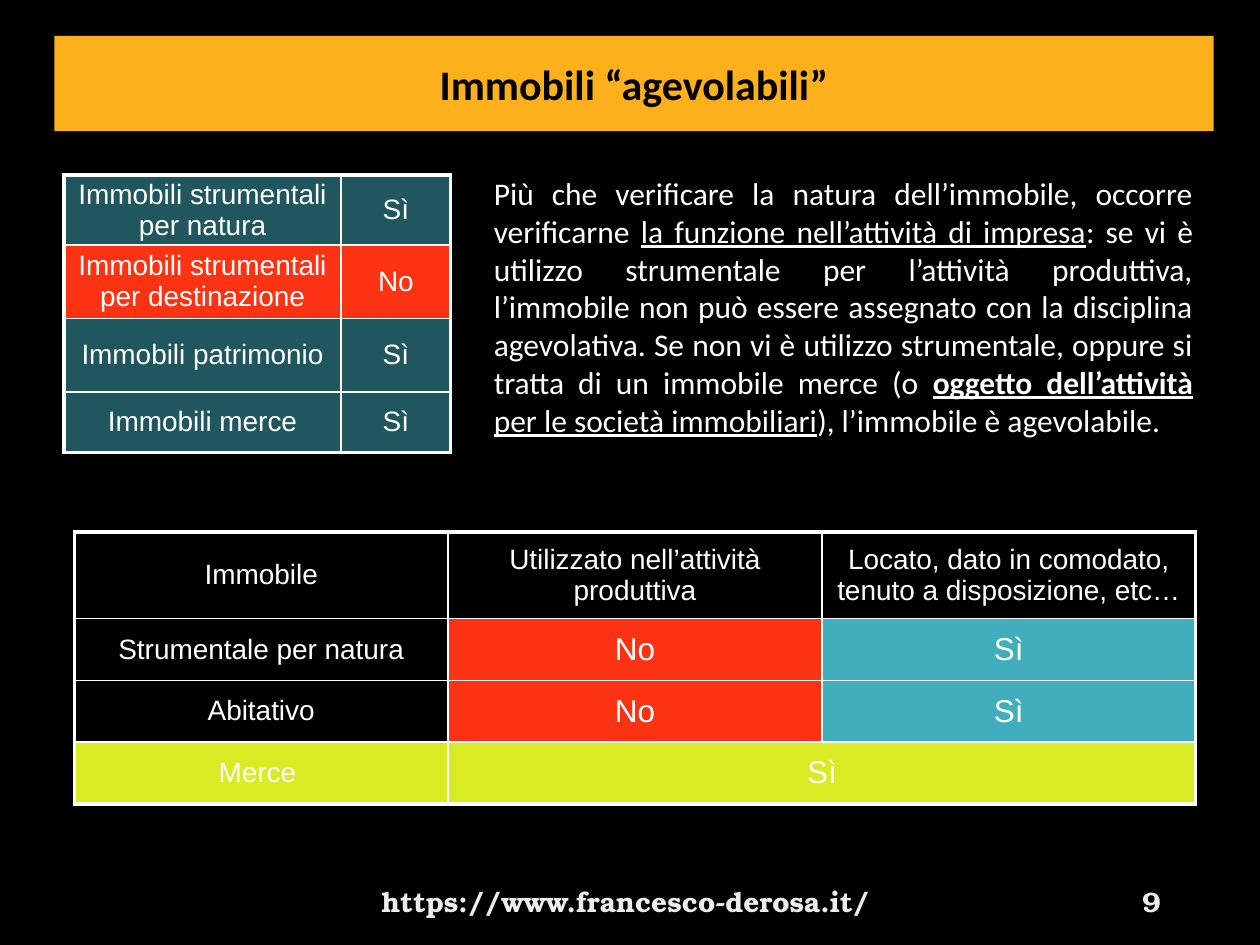
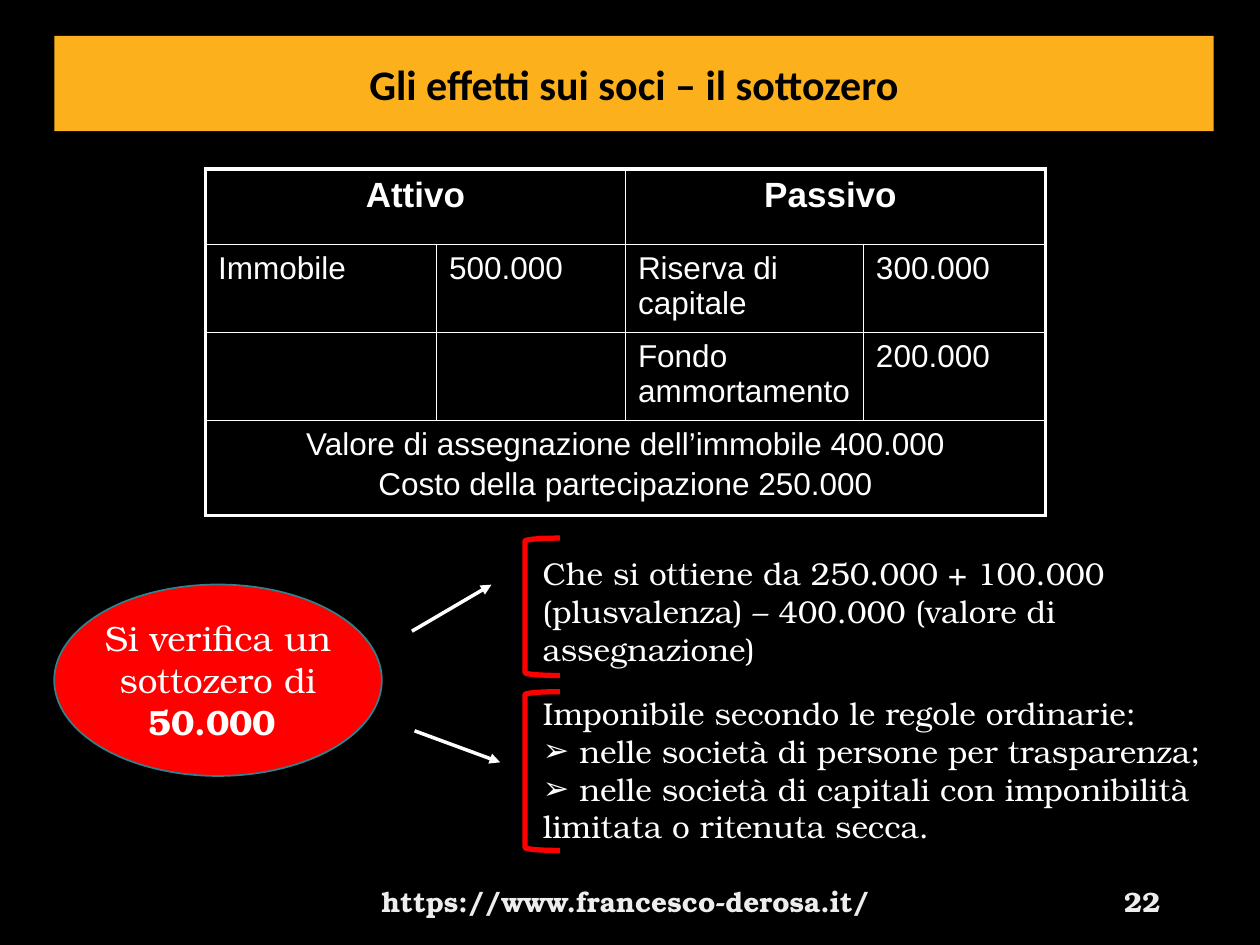
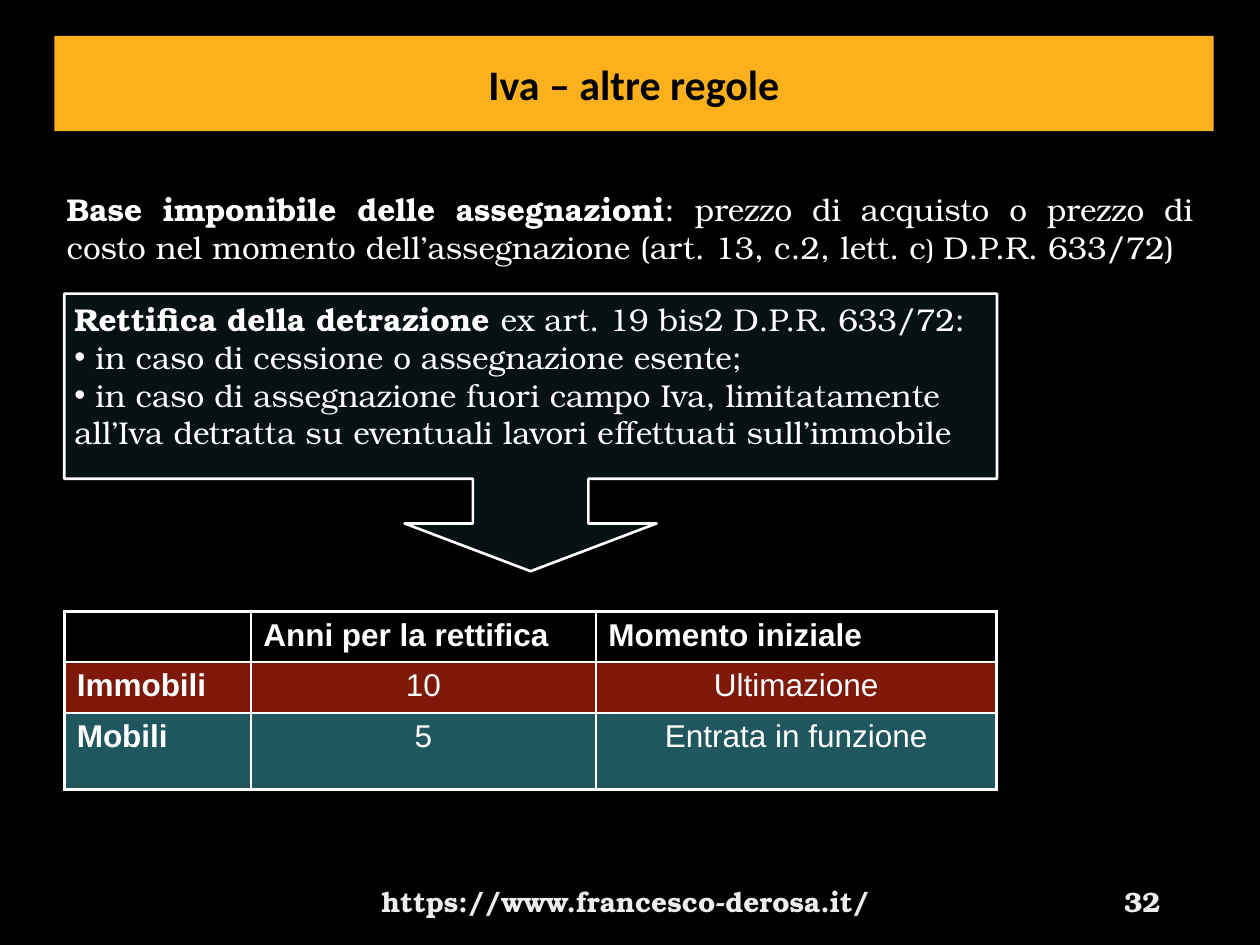
from dataclasses import dataclass
from lxml.etree import SubElement
from pptx import Presentation
from pptx.dml.color import RGBColor
from pptx.enum.shapes import MSO_CONNECTOR as Link, MSO_SHAPE as Form
from pptx.enum.text import MSO_ANCHOR as Anchor, MSO_AUTO_SIZE as Fit, PP_ALIGN as Align
from pptx.oxml.ns import qn
from pptx.util import Pt

HUES = {"black": "000000", "white": "FFFFFF", "amber": "FCB11C", "teal": "41AEBD",
        "coral": "FC3312", "lime": "D8EB23", "red": "FF0000", "rim": "30818C",
        "pale": "EDEDED"}
SANS, SERIF, GRID = "Calibri", "TeX Gyre Bonum", "Arial"
LEFT, MID, JUST, RIGHT = Align.LEFT, Align.CENTER, Align.JUSTIFY, Align.RIGHT
SITE = "https://www.francesco-derosa.it/"


@dataclass
class Cell:
    text: str = ""
    fill: str = ""
    alpha: int = 100
    size: int = 18
    bold: bool = False
    align: Align = MID
    span: int = 1


def small(text, fill="", alpha=100):
    return Cell(text, fill, alpha, 16)


def left(text, bold=False, fill="", alpha=100):
    return Cell(text, fill, alpha, bold=bold, align=LEFT)


# ---- Content: tables (None marks a cell covered by a span) ----
KINDS = {
    "at": (36.5, 100), "cols": (158.5, 62.5), "rows": (40, 42, 42, 34.5),
    "middle": True, "tight": True,
    "cells": [[small(name, *tint), small(answer, *tint)] for name, answer, tint in (
        ("Immobili strumentali per natura", "Sì", ("teal", 50)),
        ("Immobili strumentali per destinazione", "No", ("coral",)),
        ("Immobili patrimonio", "Sì", ("teal", 50)),
        ("Immobili merce", "Sì", ("teal", 50)))]}

USES = {
    "at": (42.5, 304), "cols": (213.6,) * 3, "rows": (49.5, 35.3, 35.3, 35.3),
    "middle": True,
    "cells": [
        [small("Immobile"), small("Utilizzato nell’attività produttiva"),
         small("Locato, dato in comodato, tenuto a disposizione, etc…")],
        [small("Strumentale per natura"), Cell("No", "coral"), Cell("Sì", "teal")],
        [small("Abitativo"), Cell("No", "coral"), Cell("Sì", "teal")],
        [small("Merce ", "lime"), Cell("Sì", "lime", span=2), None]]}

SHEET = {
    "at": (117.4, 96.6), "cols": (132, 108, 136, 104), "rows": (43, 50.3, 50.3, 54.3),
    "cells": [
        [Cell("Attivo", size=20, bold=True, span=2), None,
         Cell("Passivo ", size=20, bold=True, span=2), None],
        [left("Immobile"), left("500.000"), left("Riserva di capitale"), left("300.000")],
        [Cell(), Cell(), left("Fondo ammortamento"), left("200.000")],
        [Cell("Valore di assegnazione dell’immobile 400.000\n"
              "Costo della partecipazione 250.000", span=4), None, None, None]]}

YEARS = {
    "at": (36.7, 349.3), "cols": (106.6, 197.2, 229), "rows": (29, 29, 44),
    "cells": [
        [Cell(), left("Anni per la rettifica", True), left("Momento iniziale", True)],
        [left("Immobili", True, "coral", 50), Cell("10", "coral", 50),
         Cell("Ultimazione", "coral", 50)],
        [left("Mobili", True, "teal", 50), Cell("5", "teal", 50),
         Cell("Entrata in funzione", "teal", 50)]]}

# ---- Content: text as (bullet, runs); run marks: b bold, u underline, s small ----
RULE = [("", [
    ("Più che verificare la natura dell’immobile, occorre verificarne ", ""),
    ("la funzione nell’attività di impresa", "u"),
    (": se vi è utilizzo strumentale per l’attività produttiva, l’immobile non può essere "
     "assegnato con la disciplina agevolativa. Se non vi è utilizzo strumentale, oppure si "
     "tratta di un immobile merce (o ", ""),
    ("oggetto dell’attività", "bu"),
    (" per le società immobiliari", "u"),
    ("), l’immobile è agevolabile.", "")])]
BELOW = [("", [("Si verifica un sottozero di ", ""), ("50.000 ", "b")])]
SUM = [("", [("Che si ottiene da 250.000 + 100.000 (plusvalenza) – 400.000 "
              "(valore di assegnazione)", "")])]
TAX = [
    ("", [("Imponibile secondo le regole ordinarie:", "")]),
    ("➢", [(" nelle società di persone per trasparenza;", "")]),
    ("➢", [(" nelle società di capitali con imponibilità limitata o ritenuta secca.", "")])]
BASE = [("", [
    ("Base imponibile delle assegnazioni", "b"),
    (": prezzo di acquisto o prezzo di costo nel momento dell’assegnazione "
     "(art. 13, c.2, lett. c", ""),
    (") ", "s"), ("D.P.R. 633/72)", "")])]
REFUND = [
    ("", [("Rettifica della detrazione ", "b"), ("ex art. 19 bis2 D.P.R. 633/72:", "")]),
    ("•", [(" in caso di cessione o assegnazione esente;", "")]),
    ("•", [(" in caso di assegnazione fuori campo Iva, limitatamente all’Iva detratta su "
            "eventuali lavori effettuati sull’immobile", "")])]
BRACES = [(307.5, 78.5), (395.3, 90.7)]  # top, height
ARROWS = [(235.4, 360.7, 280.8, 334.1), (236.9, 417.6, 285.8, 435.6)]


# ---- Helpers ----
def pts(*nums):
    return [Pt(num) for num in nums]


def rgb(name):
    return RGBColor.from_string(HUES[name])


def sub(node, tag, **atts):
    return SubElement(node, qn("a:" + tag), **atts)


def paint(fill, name, alpha=100):
    if not name:
        fill.background()
        return
    fill.solid()
    fill.fore_color.rgb = rgb(name)
    if alpha < 100:
        tone = next(fill._xPr.find(qn("a:solidFill")).iter(qn("a:srgbClr")))
        sub(tone, "alpha", val=str(alpha * 1000))


def style(para, face, size, hue="white", bold=False, align=LEFT):
    para.alignment = align
    font = para.font
    font.name, font.size, font.bold = face, Pt(size), bold
    font.color.rgb = rgb(hue)


def place(shape, box):
    shape.left, shape.top, shape.width, shape.height = pts(*box)


def write(frame, paras, face=SERIF, size=18, hue="white", align=LEFT):
    frame.word_wrap = True
    frame.auto_size = Fit.NONE
    for pos, (mark, runs) in enumerate(paras):
        para = frame.add_paragraph() if pos else frame.paragraphs[0]
        para.space_before = Pt(0)
        props = para._p.get_or_add_pPr()
        props.set("marL", "0")
        props.set("indent", "0")
        if mark:
            sub(props, "buFont", typeface=GRID)
            sub(props, "buChar", char=mark)
        else:
            sub(props, "buNone")
        style(para, face, size, hue, align=align)
        for text, marks in runs:
            run = para.add_run()
            run.text = text
            if "b" in marks:
                run.font.bold = True
            if "u" in marks:
                run.font.underline = True
            if "s" in marks:
                run.font.size = Pt(16)


def label(slide, box, paras, **look):
    text = slide.shapes.add_textbox(*pts(*box))
    write(text.text_frame, paras, **look)
    return text


def shape(slide, form, box, fill, line, width, alpha=100):
    item = slide.shapes.add_shape(form, *pts(*box))
    item.shadow.inherit = False
    paint(item.fill, fill, alpha)
    item.line.color.rgb = rgb(line)
    item.line.width = Pt(width)
    return item


def arrow(slide, ends):
    link = slide.shapes.add_connector(Link.STRAIGHT, *pts(*ends))
    link.line.color.rgb = rgb("white")
    link.line.width = Pt(2)
    sub(link.line._get_or_add_ln(), "tailEnd", type="triangle")
    sub(link._element.spPr, "effectLst")


def edge(cell, thick):
    """Draw the four borders, heavy on the sides named in thick."""
    props = cell._tc.get_or_add_tcPr()
    for side in "LRTB":
        width = 2.25 if side in thick else 1
        line = sub(props, "ln" + side, w=str(Pt(width)))
        sub(sub(line, "solidFill"), "srgbClr", val=HUES["white"])


def table(slide, data):
    cols, rows, cells = data["cols"], data["rows"], data["cells"]
    box = (*data["at"], sum(cols), sum(rows))
    grid = slide.shapes.add_table(len(rows), len(cols), *pts(*box)).table
    grid.first_row = grid.horz_banding = False
    for col, width in zip(grid.columns, cols):
        col.width = Pt(width)
    for row, height in zip(grid.rows, rows):
        row.height = Pt(height)
    for r, line in enumerate(cells):
        for c, item in enumerate(line):
            cell, span = grid.cell(r, c), item.span if item else 1
            ends = {"L": c == 0, "T": r == 0, "R": c + span == len(cols),
                    "B": r == len(rows) - 1}
            edge(cell, [side for side in ends if ends[side]])
            if not item:
                continue
            paint(cell.fill, item.fill, item.alpha)
            if span > 1:
                cell.merge(grid.cell(r, c + span - 1))
            if data.get("middle"):
                cell.vertical_anchor = Anchor.MIDDLE
            if data.get("tight"):
                cell.margin_left = cell.margin_right = Pt(0)
                cell.margin_top = cell.margin_bottom = Pt(0)
            cell.text = item.text
            for pos, para in enumerate(cell.text_frame.paragraphs):
                if pos:
                    para.space_before = Pt(3)
                style(para, GRID, item.size, bold=item.bold, align=item.align)


def page(deck, title, number, box, paras, **look):
    """Add a slide with its title band, body text and footer."""
    slide = deck.slides.add_slide(deck.slide_layouts[1])
    band, body = slide.shapes.title, slide.placeholders[1]
    place(band, (31, 20.5, 662.5, 54.5))
    paint(band.fill, "amber")
    band.text_frame.text = title
    band.text_frame.vertical_anchor = Anchor.MIDDLE
    style(band.text_frame.paragraphs[0], SANS, 24, "black", True, MID)
    place(body, box)
    write(body.text_frame, paras, **look)
    for spot, text, align in (((201.6, 500.4, 311.8, 28.8), SITE, MID),
                              ((508.3, 500.4, 162, 28.8), number, RIGHT)):
        foot = label(slide, spot, [("", [(text, "b")])], size=16, hue="pale", align=align)
        foot.text_frame.vertical_anchor = Anchor.MIDDLE
    return slide, body


def main():
    deck = Presentation()
    deck.slide_width, deck.slide_height = pts(720, 540)
    paint(deck.slide_master.background.fill, "black")

    # Eligible properties
    slide, _ = page(deck, "Immobili “agevolabili”", "9", (275, 95.8, 414, 160), RULE,
                    face=SANS, align=JUST)
    table(slide, KINDS)
    table(slide, USES)

    # Effects on the partners
    slide, _ = page(deck, "Gli effetti sui soci – il sottozero", "22",
                    (303, 393, 391, 94.5), TAX)
    table(slide, SHEET)
    shape(slide, Form.FLOWCHART_CONNECTOR, (31, 334, 187.2, 109.4), "red", "rim", 1)
    label(slide, (31, 348.5, 187.2, 80), BELOW, size=20, align=MID)
    label(slide, (303, 313.2, 365, 72.7), SUM)
    for top, height in BRACES:
        shape(slide, Form.LEFT_BRACKET, (300, top, 20, height), "", "red", 3)
    for ends in ARROWS:
        arrow(slide, ends)

    # VAT rules
    slide, body = page(deck, "Iva – altre regole", "32", (35.3, 167.8, 529.2, 116.6), REFUND)
    label(slide, (31, 105, 658, 51), BASE, align=JUST)
    call = shape(slide, Form.DOWN_ARROW_CALLOUT, (36.7, 167.8, 533, 158.6),
                 "teal", "white", 1.5, 10)
    for pos, share in enumerate((0.416, 0.454, 0.172, 0.667)):
        call.adjustments[pos] = share
    body._element.addprevious(call._element)  # keep the text above the callout
    table(slide, YEARS)

    deck.save("out.pptx")


if __name__ == "__main__":
    main()
